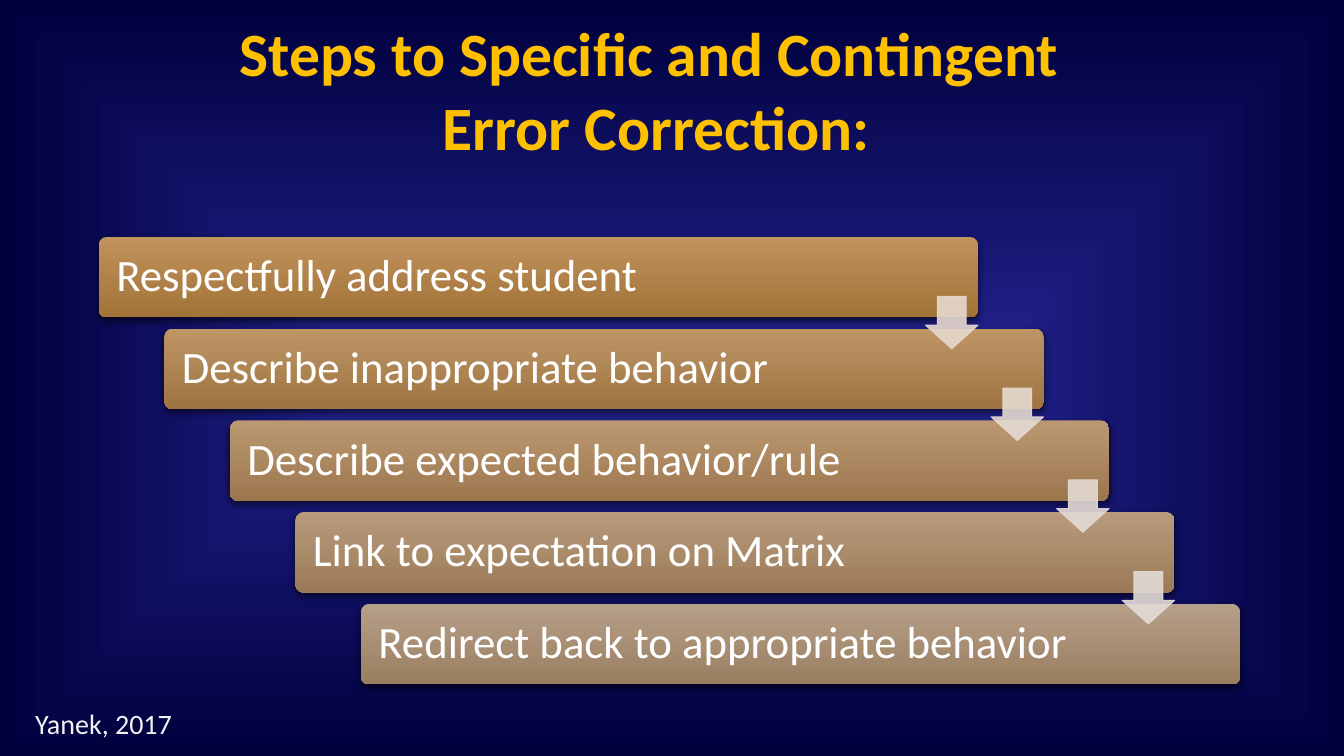
from lxml.etree import SubElement
from pptx import Presentation
from pptx.dml.color import RGBColor
from pptx.enum.shapes import MSO_SHAPE as Preset
from pptx.enum.text import MSO_ANCHOR as Anchor, MSO_AUTO_SIZE as AutoSize, PP_ALIGN as Align
from pptx.oxml import parse_xml
from pptx.oxml.ns import nsdecls, qn
from pptx.util import Inches, Pt

COLORS = {"title": "FFC000", "outline": "404040", "step": "FFFFFF", "source": "F2F2F2",
          "glow": "242490", "night": "00003E"}
STEPS = [  # wording, top colour, bottom colour, colour of the arrow that follows
    ("Respectfully address student", "C1935D", "A17337", "E7D9CF"),
    ("Describe inappropriate behavior", "BF9566", "9E7542", "E5DAD1"),
    ("Describe expected behavior/rule", "BB9871", "9C774E", "E4DBD4"),
    ("Link to expectation on Matrix", "B89B7D", "9B7A57", "E3DCD6"),
    ("Redirect back to appropriate behavior", "B69F88", "9A7E61", None),
]
LEFT, TOP, STEP_X, STEP_Y = 0.98, 2.35, 0.65, 0.91
BAR_WIDTH, BAR_HEIGHT, ARROW = 8.72, 0.8, 0.52
SHADOW = (f'<a:effectLst {nsdecls("a")}><a:outerShdw blurRad="{Pt(5)}" dist="{Pt(2)}" dir="5400000">'
          '<a:srgbClr val="000000"><a:alpha val="60000"/></a:srgbClr></a:outerShdw></a:effectLst>')


def blend(fill, *ends):
    fill.gradient()
    for stop, color in zip(fill.gradient_stops, ends):
        stop.color.rgb = RGBColor.from_string(color)


def write(frame, wording, size, color, **layout):
    """Fill a text frame with one paragraph and return its first run."""
    for key, value in {"word_wrap": True, "auto_size": AutoSize.NONE,
                       "vertical_anchor": Anchor.MIDDLE, **layout}.items():
        setattr(frame, key, value)
    frame.text = wording
    for run in frame.paragraphs[0].runs:
        run.font.size, run.font.name = Pt(size), "Calibri"
        run.font.color.rgb = RGBColor.from_string(COLORS[color])
    return frame.paragraphs[0]


prs = Presentation()
prs.slide_width, prs.slide_height = Inches(13.33), Inches(7.5)
slide = prs.slides.add_slide(prs.slide_layouts[5])

# Background glowing from the centre
blend(slide.background.fill, COLORS["glow"], COLORS["night"])
glow = slide.element.find(".//" + qn("a:gradFill"))
glow.remove(glow.find(qn("a:lin")))
center = SubElement(SubElement(glow, qn("a:path"), path="shape"), qn("a:fillToRect"))
for side in "ltrb":
    center.set(side, "50000")

# Title
title = slide.shapes.title
title.left, title.top, title.width, title.height = map(Inches, (0.85, 0.35, 11.32, 1.06))
heading = write(title.text_frame, "Steps to Specific and Contingent \vError Correction:", 44, "title")
heading.alignment = Align.CENTER
for run in heading.runs:
    run.font.bold = True
    props = run.font._element
    props.insert(0, parse_xml(
        f'<a:ln {nsdecls("a")} w="{Pt(0.75)}"><a:solidFill><a:srgbClr val="{COLORS["outline"]}">'
        '<a:alpha val="10000"/></a:srgbClr></a:solidFill></a:ln>'))
    props.insert(2, parse_xml(SHADOW))

# Staircase of steps
for i, (wording, upper, lower, _) in enumerate(STEPS):
    bar = slide.shapes.add_shape(Preset.ROUNDED_RECTANGLE, Inches(LEFT + i * STEP_X),
                                 Inches(TOP + i * STEP_Y), Inches(BAR_WIDTH), Inches(BAR_HEIGHT))
    bar.adjustments[0] = 0.1
    blend(bar.fill, upper, lower)
    bar.fill.gradient_angle = 270
    bar.line.fill.background()
    bar._element.spPr.append(parse_xml(SHADOW))
    step = write(bar.text_frame, wording, 32, "step", margin_left=Inches(0.15))
    step.alignment, step.line_spacing = Align.LEFT, 0.9

# Arrows at the right ends, each leading down to the next step
for i, (*_, color) in enumerate(STEPS[:-1]):
    arrow = slide.shapes.add_shape(
        Preset.DOWN_ARROW, Inches(LEFT + BAR_WIDTH - ARROW + i * STEP_X),
        Inches(TOP + 0.59 + i * STEP_Y), Inches(ARROW), Inches(ARROW))
    arrow.adjustments[0], arrow.adjustments[1] = 0.55, 0.45
    arrow.shadow.inherit = False
    arrow.fill.solid()
    arrow.line.width = Pt(0.75)
    for paint in (arrow.fill.fore_color, arrow.line.color):
        paint.rgb = RGBColor.from_string(color)
    for tint in arrow._element.spPr.iter(qn("a:srgbClr")):
        SubElement(tint, qn("a:alpha"), val="90000")

# Source
source = slide.shapes.add_textbox(*map(Inches, (0.25, 6.98, 7.3, 0.4)))
write(source.text_frame, "Yanek, 2017", 20, "source")

prs.save("out.pptx")
